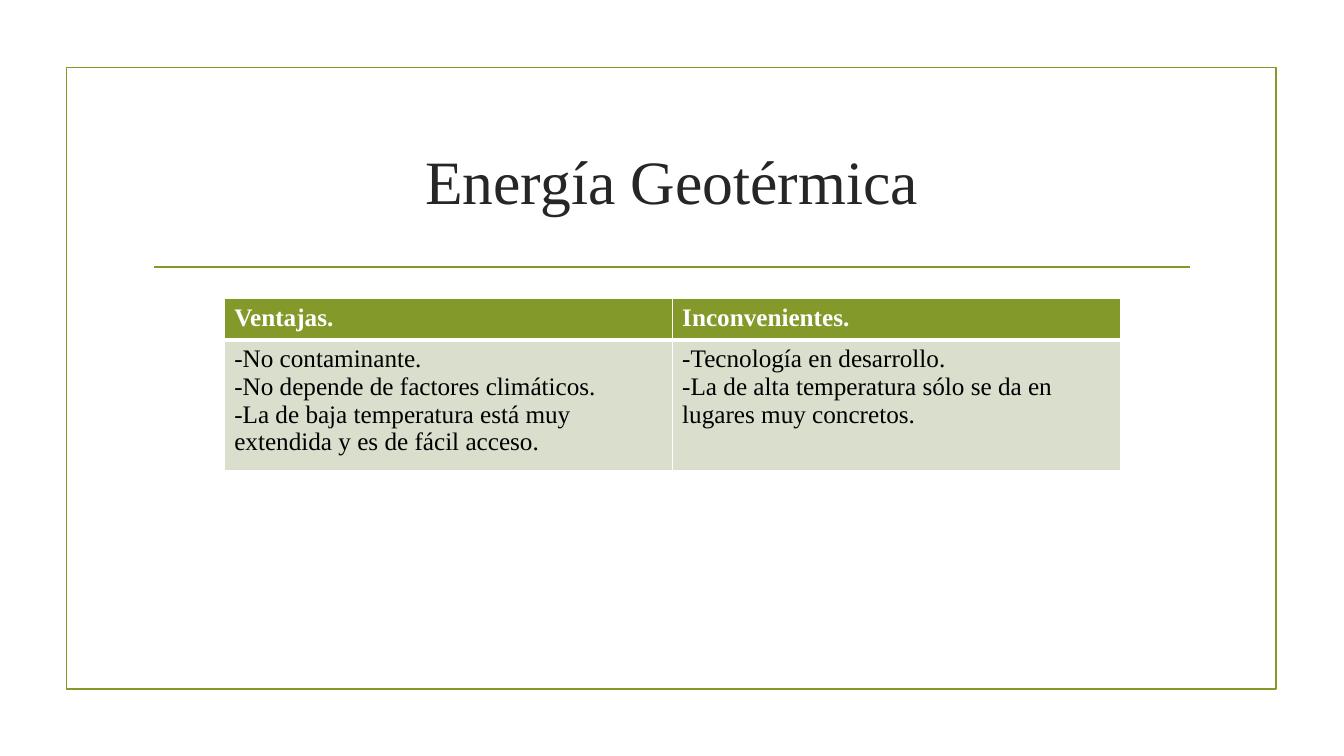
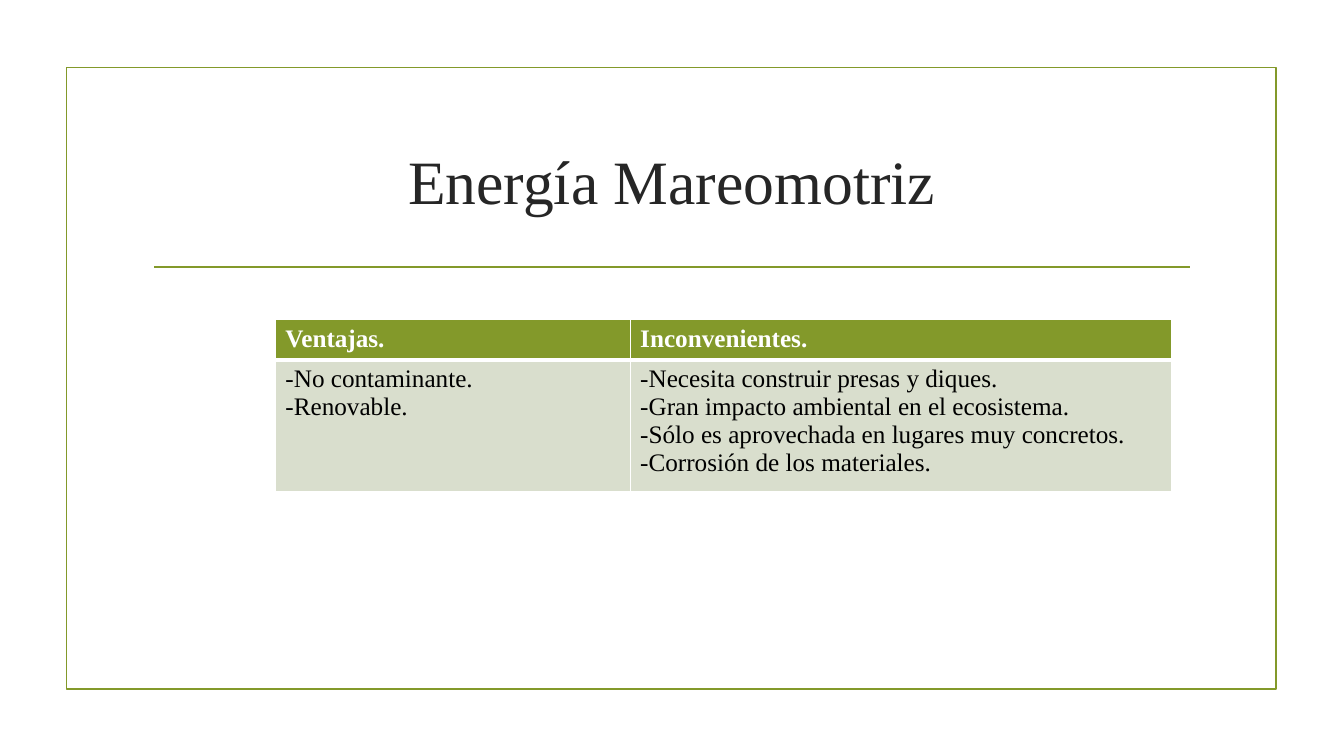
from dataclasses import dataclass

from lxml.etree import SubElement
from pptx import Presentation
from pptx.dml.color import RGBColor
from pptx.enum.shapes import MSO_CONNECTOR as Connector, MSO_SHAPE as Shape
from pptx.enum.text import MSO_ANCHOR as Anchor, PP_ALIGN as Align
from pptx.oxml import parse_xml
from pptx.oxml.ns import nsdecls, qn
from pptx.util import Cm, Pt


@dataclass(frozen=True)
class Theme:
    font: str = "Times New Roman"
    accent: str = "83992A"
    title: str = "262626"
    text: str = "000000"
    light: str = "FFFFFF"
    cell: str = "D9DECD"
    title_size: int = 44
    table_size: int = 18
    line_width: float = 1.25
    thin_border: int = 1
    thick_border: int = 3


def write_text(frame, text, *, theme, size, color, bold=False,
               align=Align.LEFT, anchor=Anchor.TOP):
    """Fill a text frame, one paragraph for each line of text."""
    frame.word_wrap = True
    frame.vertical_anchor = anchor
    for index, line in enumerate(text.split("\n")):
        paragraph = frame.add_paragraph() if index else frame.paragraphs[0]
        paragraph.alignment = align
        run = paragraph.add_run()
        run.text = line
        run.font.name = theme.font
        run.font.size = Pt(size)
        run.font.bold = bold
        run.font.color.rgb = RGBColor.from_string(color)


class Deck:
    def __init__(self, theme):
        self.theme = theme
        self.presentation = Presentation()
        self.presentation.slide_width = Cm(33.87)
        self.presentation.slide_height = Cm(19.05)
        self.slide = None

    def add_slide(self, title):
        """Start a slide with the shared frame, rule and title."""
        layout = self.presentation.slide_layouts[6]
        self.slide = self.presentation.slides.add_slide(layout)
        fill = self.slide.background.fill
        fill.solid()
        fill.fore_color.rgb = RGBColor.from_string(self.theme.light)
        self.add_frame()
        self.add_rule()
        self.add_title(title)

    def style_line(self, line):
        line.color.rgb = RGBColor.from_string(self.theme.accent)
        line.width = Pt(self.theme.line_width)

    def add_frame(self):
        shape = self.slide.shapes.add_shape(
            Shape.RECTANGLE, Cm(1.68), Cm(1.7), Cm(30.48), Cm(15.67))
        shape.shadow.inherit = False
        shape.fill.background()
        self.style_line(shape.line)

    def add_rule(self):
        rule = self.slide.shapes.add_connector(
            Connector.STRAIGHT, Cm(3.89), Cm(6.73), Cm(30), Cm(6.73))
        self.style_line(rule.line)
        SubElement(rule._element.spPr, qn("a:effectLst"))

    def add_title(self, text):
        box = self.slide.shapes.add_textbox(
            Cm(3.6), Cm(2.72), Cm(26.67), Cm(3.63))
        write_text(box.text_frame, text, theme=self.theme,
                   size=self.theme.title_size, color=self.theme.title,
                   align=Align.CENTER, anchor=Anchor.MIDDLE)

    def add_table(self, rows, left, top, widths, heights=(1.03, 3.05)):
        """Add a table whose first row is the header; lengths in cm."""
        theme = self.theme
        table = self.slide.shapes.add_table(
            len(rows), len(widths), Cm(left), Cm(top),
            Cm(sum(widths)), Cm(sum(heights))).table
        table.horz_banding = False
        for column, width in zip(table.columns, widths):
            column.width = Cm(width)
        for row, height in zip(table.rows, heights):
            row.height = Cm(height)
        for row_index, texts in enumerate(rows):
            header = row_index == 0
            for column_index, text in enumerate(texts):
                cell = table.cell(row_index, column_index)
                write_text(cell.text_frame, text, theme=theme,
                           size=theme.table_size, bold=header,
                           color=theme.light if header else theme.text)
                cell.fill.solid()
                cell.fill.fore_color.rgb = RGBColor.from_string(
                    theme.accent if header else theme.cell)
                self.add_borders(cell, header)

    def add_borders(self, cell, header):
        """Draw thin borders, with a thick one between header and body."""
        thick_side = "lnB" if header else "lnT"
        properties = cell._tc.get_or_add_tcPr()
        for index, side in enumerate(("lnL", "lnR", "lnT", "lnB")):
            width = (self.theme.thick_border if side == thick_side
                     else self.theme.thin_border)
            properties.insert(index, parse_xml(
                f'<a:{side} {nsdecls("a")} w="{Pt(width)}"><a:solidFill>'
                f'<a:srgbClr val="{self.theme.light}"/>'
                f'</a:solidFill></a:{side}>'))


def main():
    deck = Deck(Theme())
    header = ("Ventajas.", "Inconvenientes.")

    # Geothermal energy
    deck.add_slide("Energía Geotérmica")
    deck.add_table([header, (
        "-No contaminante.\n"
        "-No depende de factores climáticos.\n"
        "-La de baja temperatura está muy extendida y es de fácil acceso.",
        "-Tecnología en desarrollo.\n"
        "-La de alta temperatura sólo se da en lugares muy concretos.",
    )], left=5.65, top=7.53, widths=(11.29, 11.29))

    # Tidal energy
    deck.add_slide("Energía Mareomotriz")
    deck.add_table([header, (
        "-No contaminante.\n"
        "-Renovable.",
        "-Necesita construir presas y diques.\n"
        "-Gran impacto ambiental en el ecosistema.\n"
        "-Sólo es aprovechada en lugares muy concretos.\n"
        "-Corrosión de los materiales.",
    )], left=6.94, top=8.05, widths=(8.94, 13.64))

    deck.presentation.save("out.pptx")


if __name__ == "__main__":
    main()
